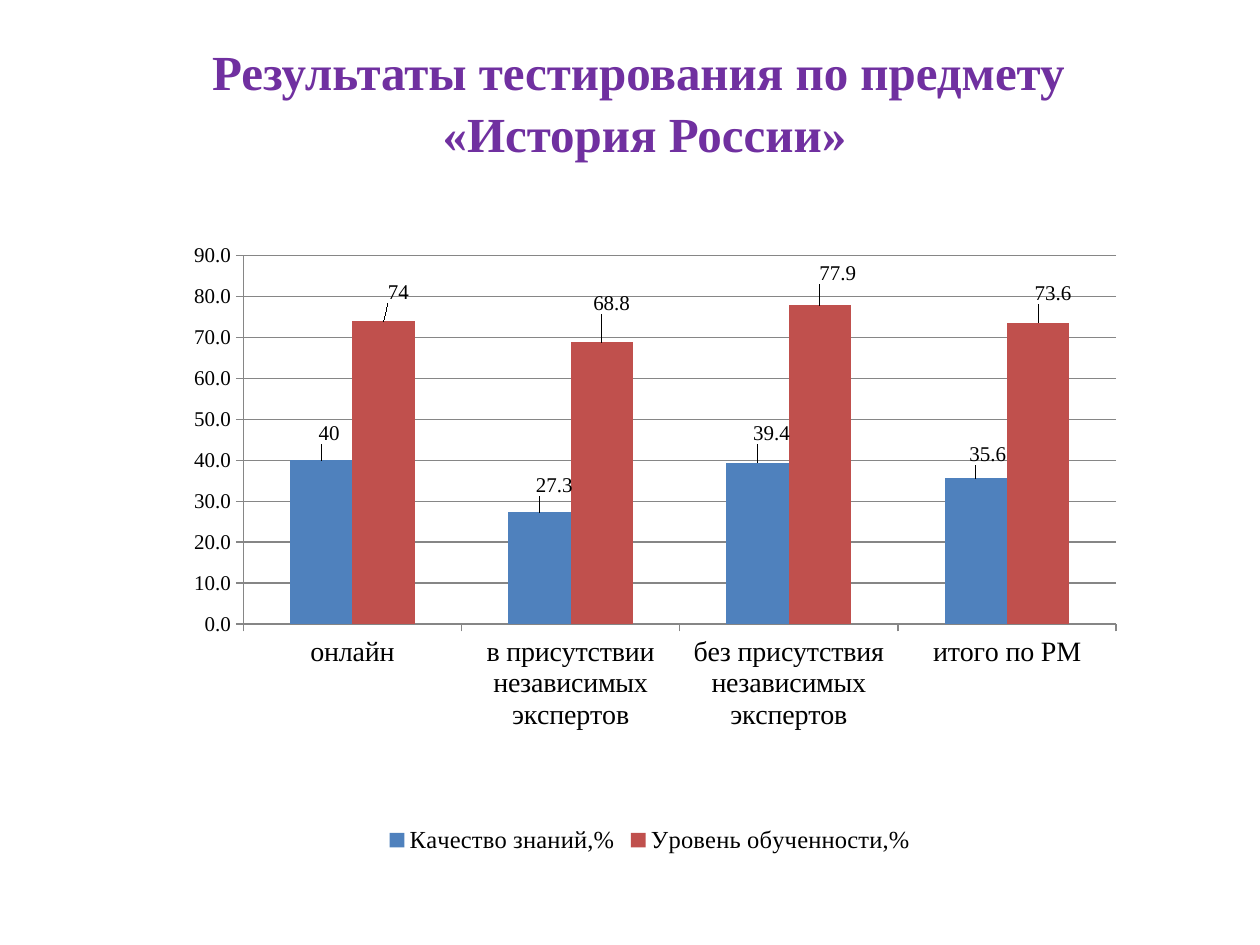
from lxml.etree import SubElement
from pptx import Presentation
from pptx.chart.data import CategoryChartData
from pptx.dml.color import RGBColor
from pptx.enum.chart import (XL_CHART_TYPE as ChartType, XL_LABEL_POSITION as LabelPos,
                             XL_LEGEND_POSITION as LegendPos, XL_TICK_MARK as Tick)
from pptx.enum.text import MSO_ANCHOR as Anchor, PP_ALIGN as Align
from pptx.oxml.ns import qn
from pptx.util import Emu, Pt

# Content
TITLE = ["Результаты тестирования по предмету ", "«История России»"]
CATEGORIES = ["онлайн", "в присутствии независимых экспертов",
              "без присутствия независимых экспертов", "итого по РМ"]
# name, colour key, values, label shifts from the bar end in px
SERIES = [
    ("Качество знаний,%", "quality", [40, 27.3, 39.4, 35.6],
     [(8, -11), (15, -11), (14, -13), (12, -8)]),
    ("Уровень обученности,%", "level", [74, 68.8, 77.9, 73.6],
     [(15, -13), (10, -23), (18, -16), (15, -13)]),
]

THEME = {
    "font": "Times New Roman",
    "title": RGBColor(0x70, 0x30, 0xA0), "text": RGBColor(0, 0, 0),
    "axis": RGBColor(0x86, 0x86, 0x86),
    "quality": RGBColor(0x4F, 0x81, 0xBD), "level": RGBColor(0xC0, 0x50, 0x4D),
    "title_size": 28, "category_size": 16, "legend_size": 14, "chart_size": 12,
}

# Geometry in px, 126 to the inch
SLIDE = (1260, 945)
TITLE_BOX = (64, 55, 1161, 149)
TITLE_BOTTOM_INSET = 65
CHART_BOX = (154, 224, 992, 635)
PLOT = {"x": 0.09, "y": 0.05, "w": 0.88, "h": 0.58}


def px(n):
    return Emu(n * 914400 // 126)


def set_font(font, size, color):
    font.name = THEME["font"]
    font.size = Pt(THEME[size])
    font.color.rgb = THEME[color]


def fill_layout(layout, settings):
    manual = SubElement(layout, qn("c:manualLayout"))
    for tag, value in settings.items():
        SubElement(manual, qn("c:" + tag)).set("val", str(value))


def add_title(slide):
    sp = slide.shapes.title
    sp.left, sp.top, sp.width, sp.height = map(px, TITLE_BOX)
    tf = sp.text_frame
    tf.word_wrap = True
    tf.vertical_anchor = Anchor.MIDDLE
    tf.margin_bottom = px(TITLE_BOTTOM_INSET)
    p = tf.paragraphs[0]
    p.alignment = Align.CENTER
    p.line_spacing = 1.05
    for i, line in enumerate(TITLE):
        if i:
            p.add_line_break()
        r = p.add_run()
        r.text = line
        r.font.bold = True
        set_font(r.font, "title_size", "title")


def style_series(series, color, shifts):
    series.format.fill.solid()
    series.format.fill.fore_color.rgb = THEME[color]
    series.data_labels.show_value = True
    series.data_labels.position = LabelPos.OUTSIDE_END
    for i, (dx, dy) in enumerate(shifts):
        series.points[i].data_label.position = LabelPos.OUTSIDE_END
    # Move each label away from its bar
    labels = series.data_labels._element.findall(qn("c:dLbl"))
    for label, (dx, dy) in zip(labels, shifts):
        layout = SubElement(label, qn("c:layout"))
        label.insert(1, layout)
        fill_layout(layout, {"x": round(dx / CHART_BOX[2], 4),
                             "y": round(dy / CHART_BOX[3], 4)})


def add_chart(slide):
    data = CategoryChartData()
    data.categories = CATEGORIES
    for name, _, values, _ in SERIES:
        data.add_series(name, values)
    chart = slide.shapes.add_chart(ChartType.COLUMN_CLUSTERED,
                                   *map(px, CHART_BOX), data).chart
    chart.has_title = False
    set_font(chart.font, "chart_size", "text")

    # Plot area and columns
    area = chart._chartSpace.chart.plotArea
    for old in area.findall(qn("c:layout")):
        area.remove(old)
    layout = SubElement(area, qn("c:layout"))
    area.insert(0, layout)
    fill_layout(layout, {"layoutTarget": "inner", "xMode": "edge", "yMode": "edge", **PLOT})
    plot = chart.plots[0]
    plot.gap_width = 150
    plot.overlap = 0
    plot.vary_by_categories = False
    for series, (_, color, _, shifts) in zip(plot.series, SERIES):
        style_series(series, color, shifts)

    # Axes
    cat_axis, val_axis = chart.category_axis, chart.value_axis
    for axis in (cat_axis, val_axis):
        axis.major_tick_mark = Tick.OUTSIDE
        axis.minor_tick_mark = Tick.NONE
        axis.format.line.color.rgb = THEME["axis"]
    set_font(cat_axis.tick_labels.font, "category_size", "text")
    val_axis.minimum_scale, val_axis.maximum_scale, val_axis.major_unit = 0, 90, 10
    val_axis.tick_labels.number_format = "0.0"
    val_axis.tick_labels.number_format_is_linked = False
    val_axis.has_major_gridlines = True
    val_axis.major_gridlines.format.line.color.rgb = THEME["axis"]

    # Legend
    chart.has_legend = True
    chart.legend.position = LegendPos.BOTTOM
    chart.legend.include_in_layout = False
    set_font(chart.legend.font, "legend_size", "text")


def main():
    prs = Presentation()
    prs.slide_width, prs.slide_height = map(px, SLIDE)
    slide = prs.slides.add_slide(prs.slide_layouts[5])
    add_title(slide)
    add_chart(slide)
    prs.save("out.pptx")


if __name__ == "__main__":
    main()
